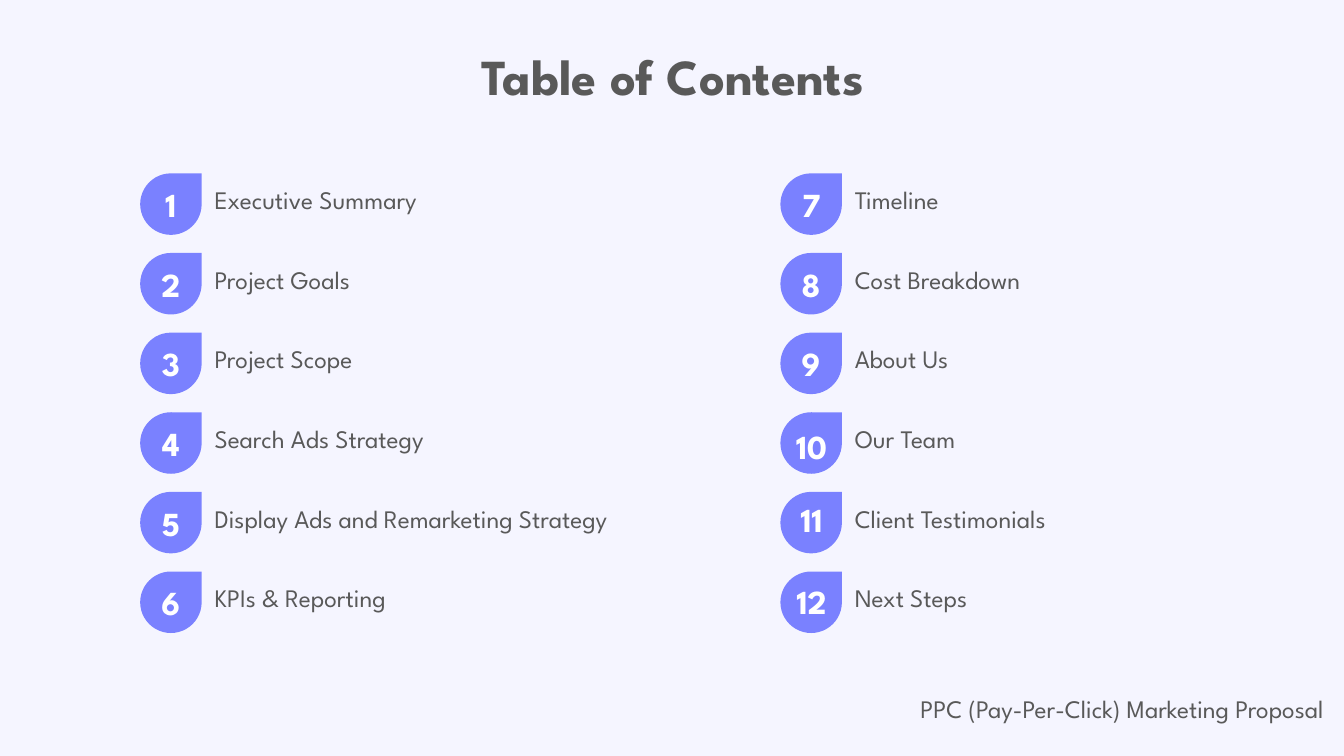
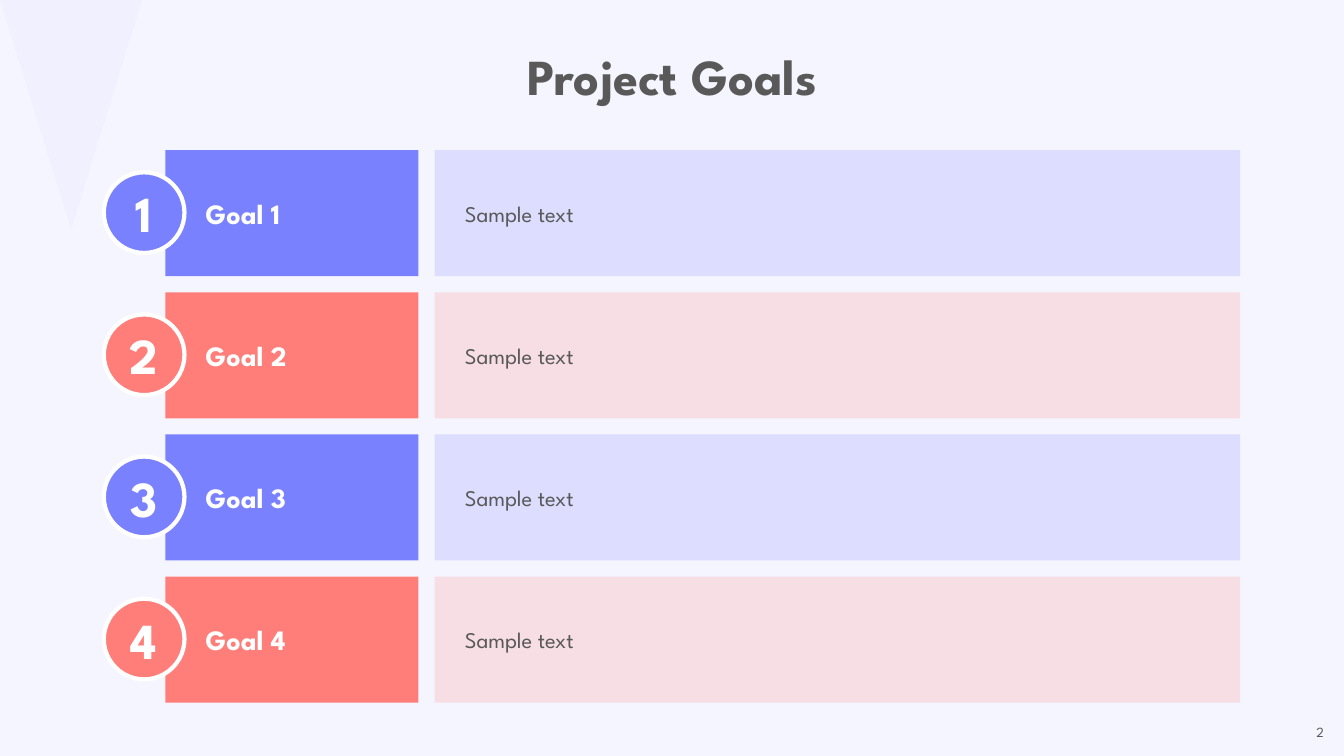
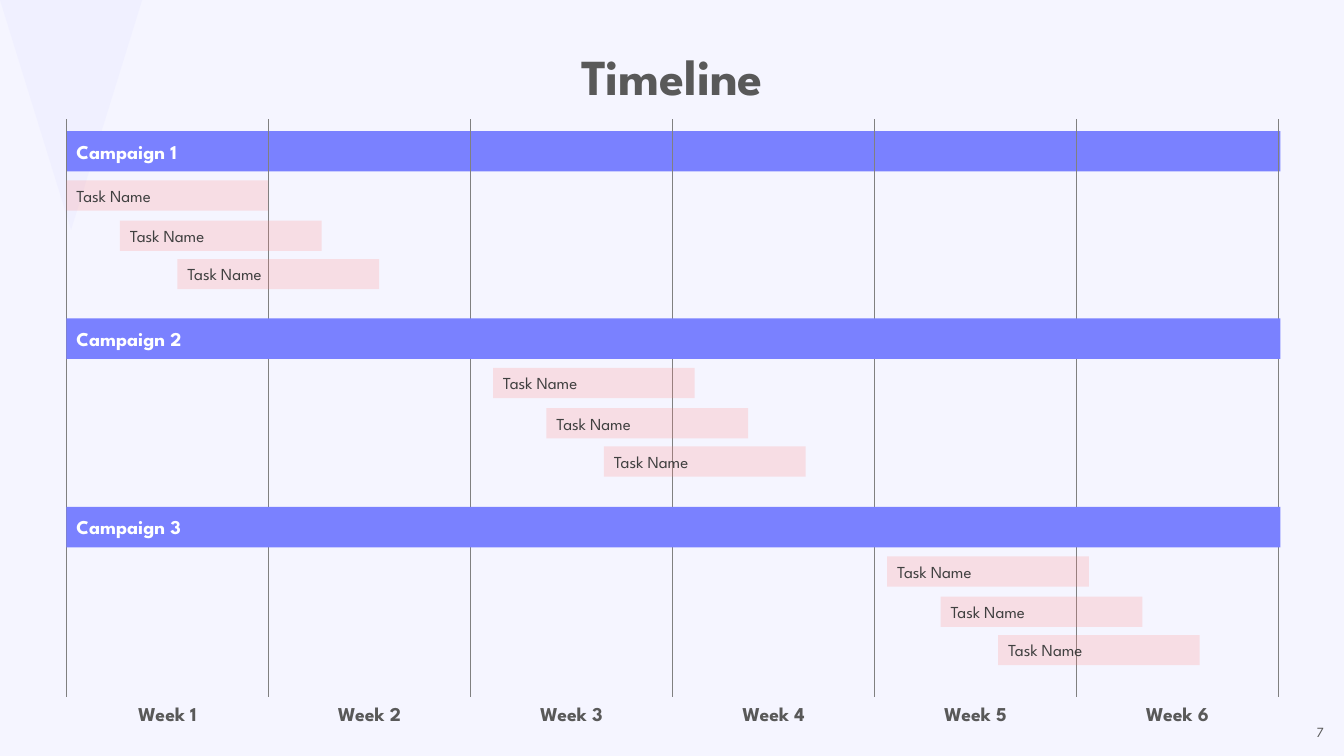
from lxml.etree import SubElement
from pptx import Presentation
from pptx.dml.color import RGBColor
from pptx.enum.shapes import MSO_CONNECTOR, MSO_SHAPE
from pptx.enum.text import MSO_ANCHOR, PP_ALIGN
from pptx.oxml.ns import qn
from pptx.util import Inches, Pt

FONT = "League Spartan"
PAGE, MIST = "F5F5FF", "ECECFF"
VIOLET, CORAL, WHITE = "7A81FF", "FF7E79", "FFFFFF"
INK, TASK_INK, GRID = "595959", "404040", "808080"
LEFT, CENTER, RIGHT = PP_ALIGN.LEFT, PP_ALIGN.CENTER, PP_ALIGN.RIGHT
MARGINS = (0.1, 0.05, 0.1, 0.05)
FOOTER_MARGINS = (0.1, 0.08, 0.2, 0.08)


def rgb(color):
    """Turn a hex string into a colour."""
    return RGBColor.from_string(color)


def write(frame, text, size=18, color=INK, bold=False, align=LEFT,
          anchor=MSO_ANCHOR.TOP, margins=MARGINS):
    """Write one formatted paragraph into a text frame."""
    frame.word_wrap = True
    frame.vertical_anchor = anchor
    (frame.margin_left, frame.margin_top,
     frame.margin_right, frame.margin_bottom) = map(Inches, margins)
    paragraph = frame.paragraphs[0]
    paragraph.alignment = align
    run = paragraph.add_run()
    run.text = text
    run.font.name = FONT
    run.font.size = Pt(size)
    run.font.bold = bold
    run.font.color.rgb = rgb(color)


class Deck:
    """Hold the shared style and the current slide."""

    def __init__(self):
        """Start an empty widescreen presentation."""
        self.presentation = Presentation()
        self.presentation.slide_width = Inches(13.33)
        self.presentation.slide_height = Inches(7.5)
        self.slide = None

    def start(self, title, number=None):
        """Add a slide with its title, and a corner and number if numbered."""
        self.slide = self.presentation.slides.add_slide(
            self.presentation.slide_layouts[6])
        background = self.slide.background.fill
        background.solid()
        background.fore_color.rgb = rgb(PAGE)
        if number:
            corner = self.shape(MSO_SHAPE.ISOSCELES_TRIANGLE,
                                0, 0, 1.41, 2.28, MIST, opacity=50)
            corner.rotation = 180
            self.label(number, 12.43, 7.1, 0.9, 0.33, size=10,
                       align=RIGHT, margins=FOOTER_MARGINS)
        self.label(title, 0.71, 0.4, 11.92, 0.71, size=36, bold=True,
                   align=CENTER)

    def label(self, text, left, top, width, height, **style):
        """Add a text box."""
        box = self.slide.shapes.add_textbox(
            *map(Inches, (left, top, width, height)))
        write(box.text_frame, text, **style)

    def shape(self, kind, left, top, width, height, fill, opacity=100,
              outline=None, text=None, **style):
        """Add a filled preset shape, with centred-height text if given."""
        shape = self.slide.shapes.add_shape(
            kind, *map(Inches, (left, top, width, height)))
        shape.shadow.inherit = False
        shape.fill.solid()
        shape.fill.fore_color.rgb = rgb(fill)
        if opacity < 100:
            color = shape.fill._xPr.find(".//" + qn("a:srgbClr"))
            SubElement(color, qn("a:alpha"), val=str(opacity * 1000))
        if outline:
            shape.line.color.rgb = rgb(outline)
            shape.line.width = Pt(3)
        else:
            shape.line.fill.background()
        if text:
            write(shape.text_frame, text, anchor=MSO_ANCHOR.MIDDLE, **style)
        return shape

    def bar(self, *place, **style):
        """Add a rectangle."""
        return self.shape(MSO_SHAPE.RECTANGLE, *place, **style)

    def rule(self, x, top, bottom):
        """Add a thin vertical line."""
        line = self.slide.shapes.add_connector(
            MSO_CONNECTOR.STRAIGHT, *map(Inches, (x, bottom, x, top)))
        line.line.color.rgb = rgb(GRID)
        line.line.width = Pt(0.5)
        SubElement(line._element.spPr, qn("a:effectLst"))


def contents(deck):
    """Build the table of contents."""
    deck.start("Table of Contents")
    deck.label("PPC (Pay-Per-Click) Marketing Proposal", 6.36, 6.8, 6.97, 0.46,
               align=RIGHT, margins=FOOTER_MARGINS)
    sections = ["Executive Summary", "Project Goals", "Project Scope",
                "Search Ads Strategy", "Display Ads and Remarketing Strategy",
                "KPIs & Reporting", "Timeline", "Cost Breakdown", "About Us",
                "Our Team", "Client Testimonials", "Next Steps"]
    wide_number_drops = {10: 0.09, 11: 0.02, 12: 0.04}
    number_style = dict(size=24, color=WHITE, bold=True, align=CENTER)
    for index, section in enumerate(sections):
        column, row = divmod(index, 6)
        number = index + 1
        left, top = 1.39 + 6.35 * column, 1.72 + 0.79 * row
        drop = wide_number_drops.get(number)
        deck.shape(MSO_SHAPE.TEAR, left, top, 0.61, 0.61, VIOLET,
                   text=None if drop else str(number), **number_style)
        if drop:
            deck.label(str(number), left - 0.04, top + drop, 0.7, 0.5,
                       **number_style)
        deck.label(section, left + 0.64, top + 0.06, 5.03, 0.4)


def goals(deck):
    """Build the four goal rows."""
    deck.start("Project Goals", "2")
    for index, color in enumerate([VIOLET, CORAL] * 2):
        top, number = 1.49 + 1.41 * index, index + 1
        deck.bar(1.64, top, 2.51, 1.25, fill=color, text=f"Goal {number}",
                 size=20, color=WHITE, bold=True, margins=(0.4, 0.3, 0.1, 0.3))
        deck.bar(4.31, top, 7.99, 1.25, fill=color, opacity=20,
                 text="Sample text", size=16, margins=(0.3, 0.2, 0.3, 0.2))
        deck.shape(MSO_SHAPE.OVAL, 1.03, top + 0.22, 0.8, 0.8, color,
                   outline=WHITE, text=str(number), size=36, color=WHITE,
                   bold=True, align=CENTER, margins=(0, 0, 0, 0))


def week_grid(deck, left, weeks, week_width):
    """Draw the week lines and the week names below them."""
    for week in range(weeks + 1):
        x = left + week * week_width
        deck.rule(x, 1.18, 6.91)
        if week < weeks:
            deck.label(f"Week {week + 1}", x, 6.91, week_width, 0.34,
                       size=14, bold=True, align=CENTER)


def timeline(deck):
    """Build the campaign timeline."""
    deck.start("Timeline", "7")
    left, weeks = 0.66, 6
    campaigns = [(1.3, left), (3.16, 4.89), (5.03, 8.8)]
    task_steps = [(0, 0.49), (0.53, 0.89), (1.1, 1.27)]
    for index, (top, first_task) in enumerate(campaigns):
        deck.bar(left, top, 12.04, 0.4, fill=VIOLET,
                 text=f"Campaign {index + 1}", size=14, color=WHITE, bold=True)
        if index == 0:
            week_grid(deck, left, weeks, 12.02 / weeks)
        for delay, drop in task_steps:
            deck.bar(first_task + delay, top + drop, 2, 0.3, fill=CORAL,
                     opacity=20, text="Task Name", size=12, color=TASK_INK)


def main():
    """Build and save the deck."""
    deck = Deck()
    contents(deck)
    goals(deck)
    timeline(deck)
    deck.presentation.save("out.pptx")


if __name__ == "__main__":
    main()
